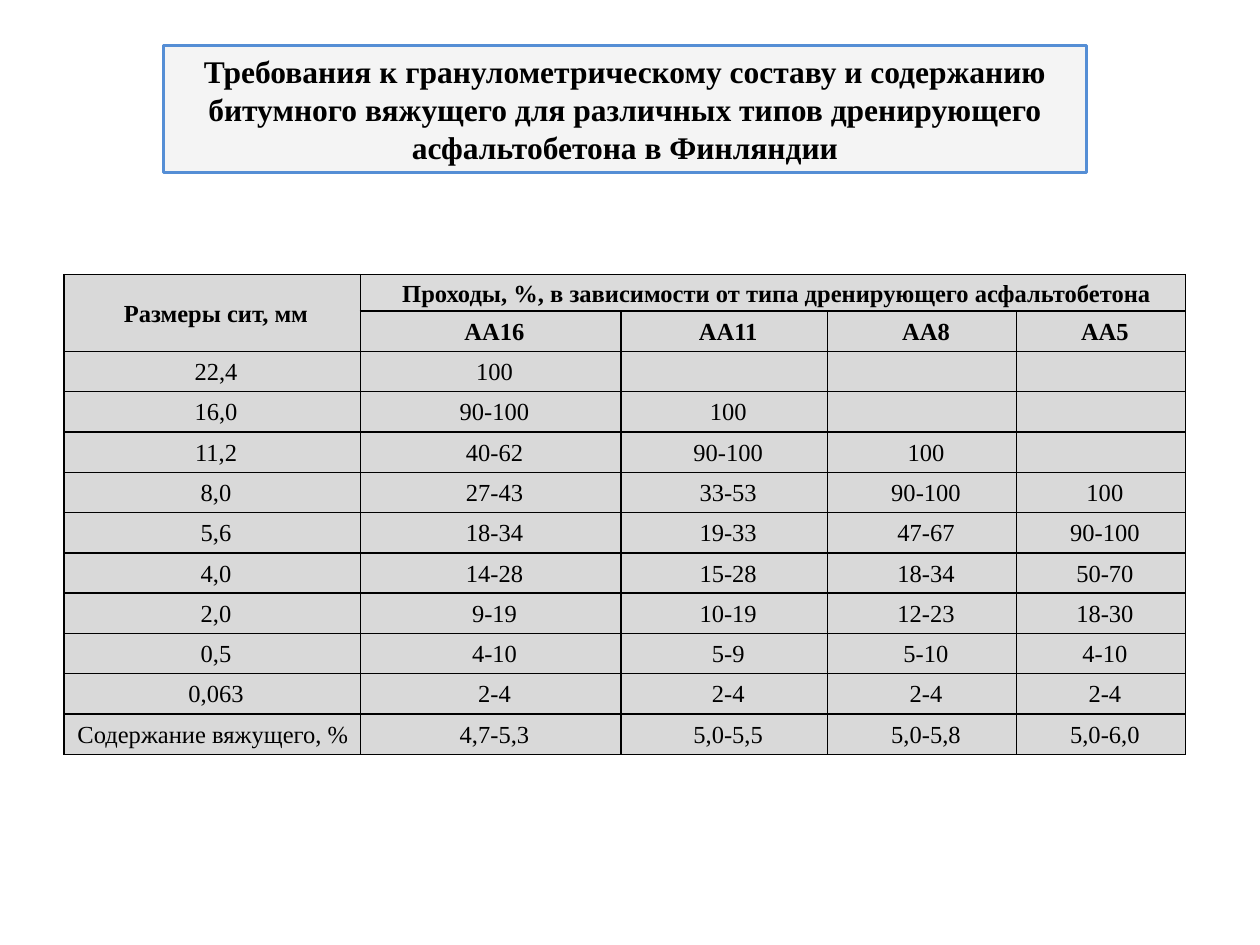
from dataclasses import dataclass

from lxml.etree import SubElement
from pptx import Presentation
from pptx.dml.color import RGBColor
from pptx.enum.text import MSO_ANCHOR, MSO_AUTO_SIZE, PP_ALIGN
from pptx.oxml.ns import qn
from pptx.util import Inches, Pt

TITLE = ("Требования к гранулометрическому составу и содержанию битумного вяжущего "
         "для различных типов дренирующего асфальтобетона в Финляндии")
HEADER_ROWS = [
    ("Размеры сит, мм", "Проходы, %, в зависимости от типа дренирующего асфальтобетона", "", "", ""),
    ("", "АА16", "АА11", "АА8", "АА5"),
]
BODY_ROWS = [
    ("22,4", "100", "", "", ""),
    ("16,0", "90-100", "100", "", ""),
    ("11,2", "40-62", "90-100", "100", ""),
    ("8,0", "27-43", "33-53", "90-100", "100"),
    ("5,6", "18-34", "19-33", "47-67", "90-100"),
    ("4,0", "14-28", "15-28", "18-34", "50-70"),
    ("2,0", "9-19", "10-19", "12-23", "18-30"),
    ("0,5", "4-10", "5-9", "5-10", "4-10"),
    ("0,063", "2-4", "2-4", "2-4", "2-4"),
    ("Содержание вяжущего, % ", "4,7-5,3", "5,0-5,5", "5,0-5,8", "5,0-6,0"),
]
COLUMN_WIDTHS = (2.35, 2.07, 1.64, 1.5, 1.34)
TOP_ROW_HEIGHT, ROW_HEIGHT = 0.29, 0.32
SLIDE_SIZE = (10, 7.5)
TITLE_AREA = (1.3, 0.36, 7.32, 1.01)
TABLE_CORNER = (0.51, 2.18)


@dataclass(frozen=True)
class Theme:
    font: str = "Times New Roman"
    title_size: int = 18
    cell_size: int = 14
    ink: str = "000000"
    title_fill: str = "F2F2F2"
    title_line: str = "558ED5"
    cell_fill: str = "D9D9D9"


THEME = Theme()


def fill_solid(fill, color, opacity=100):
    """Fill with a colour; opacity is in percent."""
    fill.solid()
    fill.fore_color.rgb = RGBColor.from_string(color)
    if opacity < 100:
        for node in fill._xPr.iter(qn("a:srgbClr")):
            SubElement(node, qn("a:alpha"), val=str(opacity * 1000))


def style_paragraph(para, size, bold):
    para.alignment = PP_ALIGN.CENTER
    para.font.name = THEME.font
    para.font.size = Pt(size)
    para.font.bold = bold
    para.font.color.rgb = RGBColor.from_string(THEME.ink)


def add_borders(cell):
    properties = cell._tc.get_or_add_tcPr()
    for side in ("lnL", "lnR", "lnT", "lnB"):
        line = SubElement(properties, qn(f"a:{side}"), w=str(Pt(1)))
        SubElement(SubElement(line, qn("a:solidFill")), qn("a:srgbClr"), val=THEME.ink)


def style_cell(cell, text, bold, opacity):
    cell.text = text
    cell.margin_left = cell.margin_right = cell.margin_top = cell.margin_bottom = 0
    cell.vertical_anchor = MSO_ANCHOR.MIDDLE
    para = cell.text_frame.paragraphs[0]
    para.line_spacing = Pt(16.4)
    para.space_before = para.space_after = Pt(2.5)
    para._p.get_or_add_pPr().set("marL", str(Inches(0.06)))
    style_paragraph(para, THEME.cell_size, bold)
    add_borders(cell)
    fill_solid(cell.fill, THEME.cell_fill, opacity)


def place_title(slide):
    title = slide.shapes.title
    title.left, title.top, title.width, title.height = map(Inches, TITLE_AREA)
    fill_solid(title.fill, THEME.title_fill, 84)
    title.line.color.rgb = RGBColor.from_string(THEME.title_line)
    title.line.width = Pt(1.75)
    frame = title.text_frame
    frame.text = TITLE
    frame.word_wrap = True
    frame.auto_size = MSO_AUTO_SIZE.NONE
    frame.vertical_anchor = MSO_ANCHOR.MIDDLE
    style_paragraph(frame.paragraphs[0], THEME.title_size, True)


def add_sieve_table(slide):
    rows = HEADER_ROWS + BODY_ROWS
    heights = [TOP_ROW_HEIGHT] + [ROW_HEIGHT] * (len(rows) - 1)
    size = (sum(COLUMN_WIDTHS), sum(heights))
    table = slide.shapes.add_table(len(rows), len(COLUMN_WIDTHS),
                                   *map(Inches, TABLE_CORNER + size)).table
    table.first_row = table.horz_banding = False
    for column, width in zip(table.columns, COLUMN_WIDTHS):
        column.width = Inches(width)
    for r, (texts, height) in enumerate(zip(rows, heights)):
        table.rows[r].height = Inches(height)
        for c, text in enumerate(texts):
            opacity = 92 if r == 0 and c > 0 else 100
            style_cell(table.cell(r, c), text, r < len(HEADER_ROWS), opacity)
    table.cell(0, 0).merge(table.cell(1, 0))
    table.cell(0, 1).merge(table.cell(0, len(COLUMN_WIDTHS) - 1))


def main():
    deck = Presentation()
    deck.slide_width, deck.slide_height = map(Inches, SLIDE_SIZE)
    slide = deck.slides.add_slide(deck.slide_layouts[5])
    place_title(slide)
    add_sieve_table(slide)
    deck.save("out.pptx")


if __name__ == "__main__":
    main()
